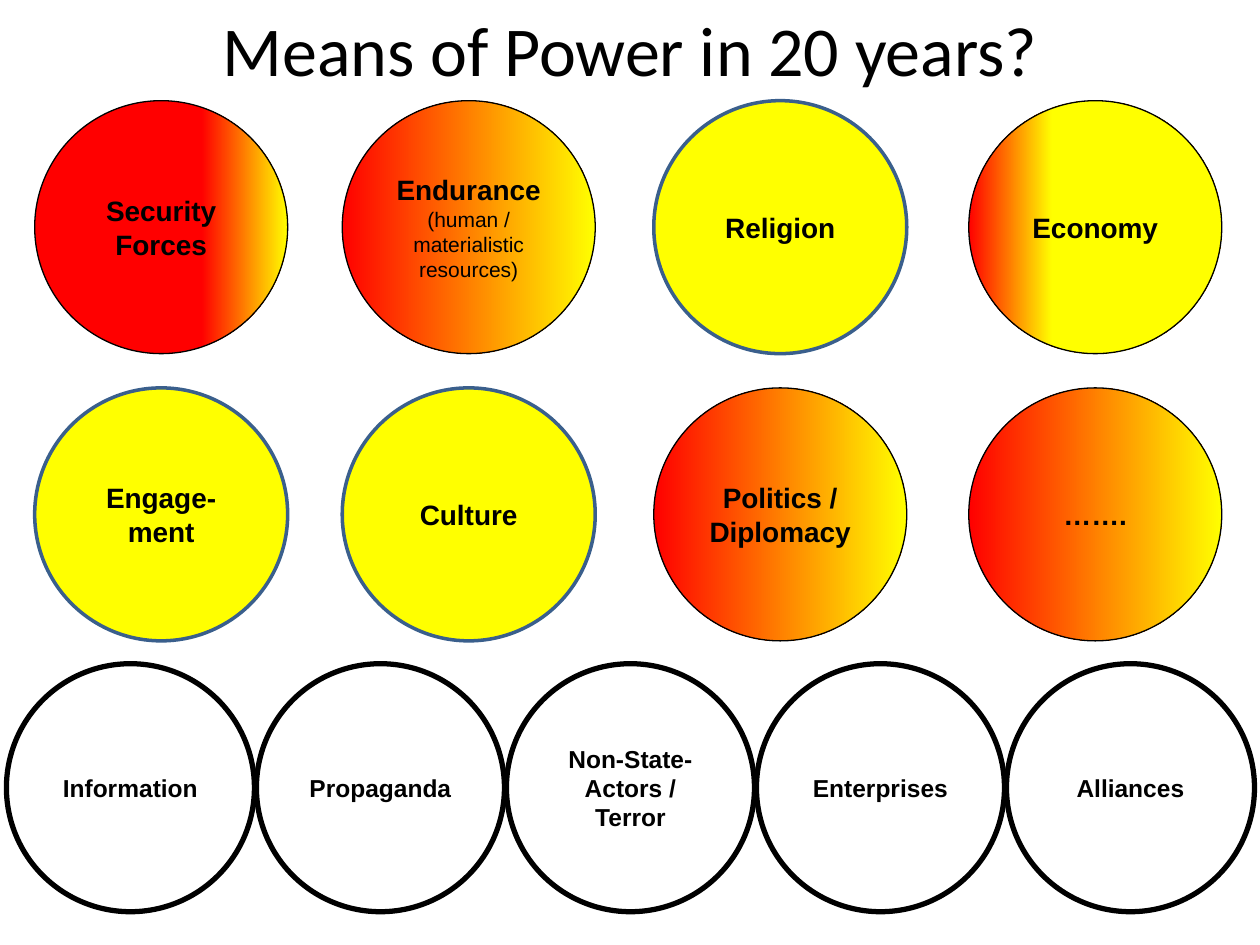
from dataclasses import dataclass

from pptx import Presentation
from pptx.dml.color import RGBColor
from pptx.enum.shapes import MSO_SHAPE
from pptx.enum.text import MSO_ANCHOR, MSO_AUTO_SIZE, PP_ALIGN
from pptx.util import Cm, Pt


@dataclass(frozen=True)
class Theme:
    red = RGBColor(0xFF, 0x00, 0x00)
    yellow = RGBColor(0xFF, 0xFF, 0x00)
    blue = RGBColor(0x3A, 0x5F, 0x8C)
    black = RGBColor(0x00, 0x00, 0x00)
    title_font = "Calibri"
    body_font = "Arial"
    title_size = Pt(40)
    means_size = Pt(16)
    actor_size = Pt(14)
    detail_size = Pt(12)


theme = Theme()


def add_run(paragraph, text, size, font=theme.body_font, bold=False):
    paragraph.alignment = PP_ALIGN.CENTER
    run = paragraph.add_run()
    run.text = text
    run.font.name = font
    run.font.size = size
    run.font.bold = bold
    run.font.color.rgb = theme.black


def add_circle(left, top, diameter, label, size, line_color, line_width):
    shape = slide.shapes.add_shape(
        MSO_SHAPE.OVAL, Cm(left), Cm(top), Cm(diameter), Cm(diameter))
    shape.shadow.inherit = False
    shape.fill.background()
    shape.line.color.rgb = line_color
    shape.line.width = Pt(line_width)
    frame = shape.text_frame
    frame.word_wrap = True
    frame.vertical_anchor = MSO_ANCHOR.MIDDLE
    add_run(frame.paragraphs[0], label, size, bold=True)
    return shape


presentation = Presentation()
presentation.slide_width = Cm(25.4)
presentation.slide_height = Cm(19.05)
slide = presentation.slides.add_slide(presentation.slide_layouts[5])

# Title
title = slide.shapes.title
title.left, title.top, title.width, title.height = Cm(4.14), Cm(0), Cm(17.12), Cm(1.96)
title_frame = title.text_frame
title_frame.word_wrap = False
title_frame.auto_size = MSO_AUTO_SIZE.SHAPE_TO_FIT_TEXT
title_frame.vertical_anchor = MSO_ANCHOR.MIDDLE
add_run(title_frame.paragraphs[0], "Means of Power in 20 years?",
        theme.title_size, theme.title_font)

# Means of power: label, detail, and red-to-yellow stops (None is plain yellow)
column_lefts = [0.7, 6.9, 13.18, 19.53]
means_rows = [
    (2.03, [("Security Forces", None, (0.66, 1)),
            ("Endurance", "(human / materialistic resources)", (0, 1)),
            ("Religion", None, None),
            ("Economy", None, (0, 0.33))]),
    (7.82, [("Engage-ment", None, None),
            ("Culture", None, None),
            ("Politics / Diplomacy", None, (0, 1)),
            ("…….", None, (0, 1))]),
]
for top, means in means_rows:
    for left, (label, detail, positions) in zip(column_lefts, means):
        line_color, line_width = (theme.black, 0.75) if positions else (theme.blue, 2)
        circle = add_circle(left, top, 5.1, label, theme.means_size,
                            line_color, line_width)
        if positions:
            circle.fill.gradient()
            circle.fill.gradient_angle = 0
            colors = (theme.red, theme.yellow)
            for stop, color, position in zip(circle.fill.gradient_stops, colors, positions):
                stop.color.rgb = color
                stop.position = position
        else:
            circle.fill.solid()
            circle.fill.fore_color.rgb = theme.yellow
        if detail:
            add_run(circle.text_frame.add_paragraph(), detail, theme.detail_size)

# Bottom row of outlined circles
actors = ["Information", "Propaganda", "Non-State-Actors / Terror",
          "Enterprises", "Alliances"]
for index, label in enumerate(actors):
    add_circle(0.13 + index * 5.04, 13.38, 5, label, theme.actor_size, theme.black, 3)

presentation.save("out.pptx")
